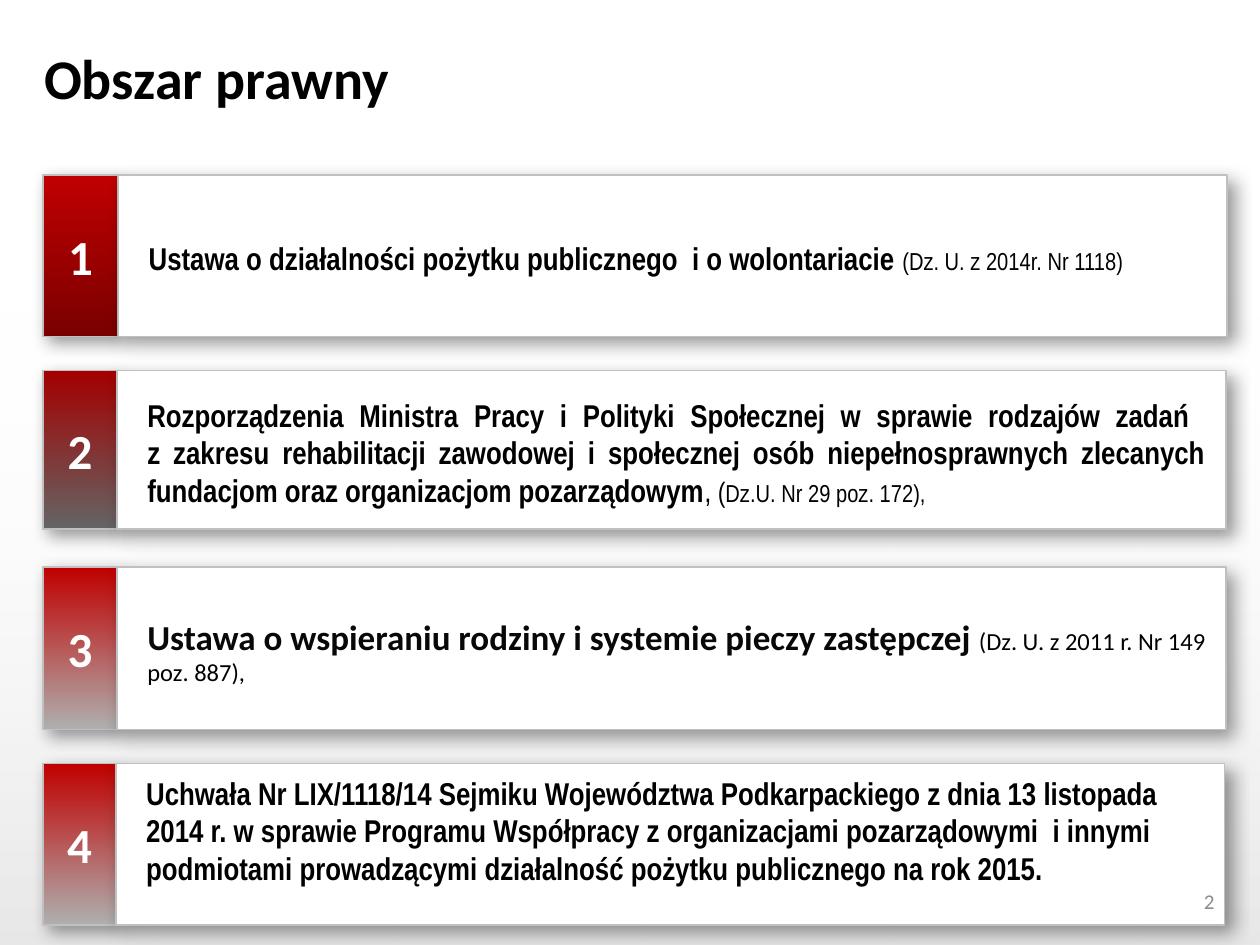
from pptx import Presentation
from pptx.dml.color import RGBColor
from pptx.enum.shapes import MSO_SHAPE
from pptx.enum.text import MSO_ANCHOR, PP_ALIGN
from pptx.oxml import parse_xml
from pptx.oxml.ns import nsdecls
from pptx.util import Inches, Pt

NARROW = {"name": "Arial Narrow", "size": 18, "color": "000000", "bold": True}
SMALL = {**NARROW, "size": 14, "bold": False}
NUMBER = {"name": "Calibri", "size": 28, "color": "FFFFFF", "bold": True}
TITLE = {**NUMBER, "size": 32, "color": "000000"}
PAGE_NUMBER = {**NUMBER, "size": 12, "color": "8C8C8C", "bold": False}

# top, height, number width, gradient, alignment, bottom inset, spans
ROWS = [
    (1.39, 1.28, 0.6, ("C00000", "7A0000"), PP_ALIGN.JUSTIFY, 0.08, [
        ("Ustawa o działalności pożytku publicznego  i o wolontariacie ", NARROW),
        ("(Dz. U. z 2014r. Nr 1118)", SMALL)]),
    (2.94, 1.26, 0.59, ("A40000", "646464"), PP_ALIGN.JUSTIFY, 0.08, [
        ("Rozporządzenia Ministra Pracy i Polityki Społecznej w sprawie rodzajów zadań \n"
         "z zakresu rehabilitacji zawodowej i społecznej osób niepełnosprawnych zlecanych "
         "fundacjom oraz organizacjom pozarządowym", NARROW),
        (",", {**NARROW, "bold": False}),
        (" (", {**SMALL, "size": 16}),
        ("Dz.U. Nr 29 poz. 172),", SMALL)]),
    (4.5, 1.29, 0.59, ("C00000", "AFAFAF"), PP_ALIGN.LEFT, 0.08, [
        ("Ustawa o wspieraniu rodziny i systemie pieczy zastępczej ",
         {**TITLE, "size": 20, "color": "080808"}),
        ("(Dz. U. z 2011 r. Nr 149 poz. 887),", {**SMALL, "name": "Calibri"})]),
    (6.06, 1.28, 0.58, ("C00000", "AFAFAF"), PP_ALIGN.LEFT, 0.34, [
        ("Uchwała Nr LIX/1118/14 Sejmiku Województwa Podkarpackiego z dnia 13 listopada "
         "2014 r. w sprawie Programu Współpracy z organizacjami pozarządowymi  i innymi "
         "podmiotami prowadzącymi działalność pożytku publicznego na rok 2015.", NARROW)]),
]


def rgb(value):
    return RGBColor.from_string(value)


class SlideBuilder:
    def __init__(self, page):
        self.page = page
        self.line_color = "C0C0C0"

    def set_text(self, shape, spans, align, insets):
        """Fill a shape with one paragraph of formatted spans."""
        frame = shape.text_frame
        frame.word_wrap = True
        frame.vertical_anchor = MSO_ANCHOR.MIDDLE
        for side, inset in zip(("left", "top", "right", "bottom"), insets):
            setattr(frame, f"margin_{side}", Inches(inset))
        para = frame.paragraphs[0]
        para.alignment = align
        for text, style in spans:
            for index, part in enumerate(text.split("\n")):
                if index:
                    para.add_line_break()
                span = para.add_run()
                span.text = part
                values = {**style, "size": Pt(style["size"])}
                span.font.color.rgb = rgb(values.pop("color"))
                for key, value in values.items():
                    setattr(span.font, key, value)

    def text(self, area, text, style, align=PP_ALIGN.LEFT, insets=(0, 0, 0, 0)):
        box = self.page.shapes.add_textbox(*map(Inches, area))
        self.set_text(box, [(text, style)], align, insets)

    def rectangle(self, area, colors):
        """Draw a rectangle with one solid colour or a downward gradient of two."""
        box = self.page.shapes.add_shape(MSO_SHAPE.RECTANGLE, *map(Inches, area))
        box.shadow.inherit = False
        if len(colors) == 1:
            box.fill.solid()
            box.fill.fore_color.rgb = rgb(colors[0])
        else:
            box.fill.gradient()
            box.fill.gradient_angle = 270
            for stop, color in zip(box.fill.gradient_stops, colors):
                stop.color.rgb = rgb(color)
        return box

    def backdrop(self, area):
        """Draw a black haze that fades out towards the top."""
        box = self.rectangle(area, ("000000", "FFFFFF"))
        box.fill.gradient_angle = 90
        box.line.fill.background()
        for color, alpha in zip(box._element.spPr.xpath(".//a:gs/a:srgbClr"), (10, 0)):
            color.append(parse_xml(f'<a:alpha {nsdecls("a")} val="{alpha * 1000}"/>'))

    def panel(self, area, colors, spans, align, insets):
        """Draw an outlined rectangle with a soft shadow and text."""
        box = self.rectangle(area, colors)
        box.line.color.rgb = rgb(self.line_color)
        box.line.width = Pt(1)
        box._element.spPr.xpath("a:effectLst")[0].append(parse_xml(
            f'<a:outerShdw {nsdecls("a")} blurRad="{Pt(10)}" dist="{Pt(5)}" dir="2700000" '
            'algn="tl" rotWithShape="0"><a:srgbClr val="000000"><a:alpha val="40000"/>'
            '</a:srgbClr></a:outerShdw>'))
        self.set_text(box, spans, align, insets)

    def row(self, number, top, height, width, colors, align, bottom, spans):
        left = 0.34
        self.panel((left, top, width, height), colors, [(str(number), NUMBER)],
                   PP_ALIGN.CENTER, (0.12, 0.08, 0.12, 0.08))
        self.panel((left + width, top, 8.8, height), ("FFFFFF",), spans,
                   align, (0.24, 0.12, 0.16, bottom))


def main():
    deck = Presentation()
    deck.slide_width, deck.slide_height = Inches(10), Inches(7.5)
    builder = SlideBuilder(deck.slides.add_slide(deck.slide_layouts[6]))
    builder.backdrop((0, 2.21, 10, 5.29))
    builder.text((0.27, 0.28, 9.47, 0.67), "Obszar prawny", TITLE,
                 insets=(0.08, 0.05, 0.08, 0.05))
    for number, row in enumerate(ROWS, 1):
        builder.row(number, *row)
    builder.text((7.31, 6.95, 2.33, 0.4), "2", PAGE_NUMBER, PP_ALIGN.RIGHT)
    deck.save("out.pptx")


if __name__ == "__main__":
    main()
